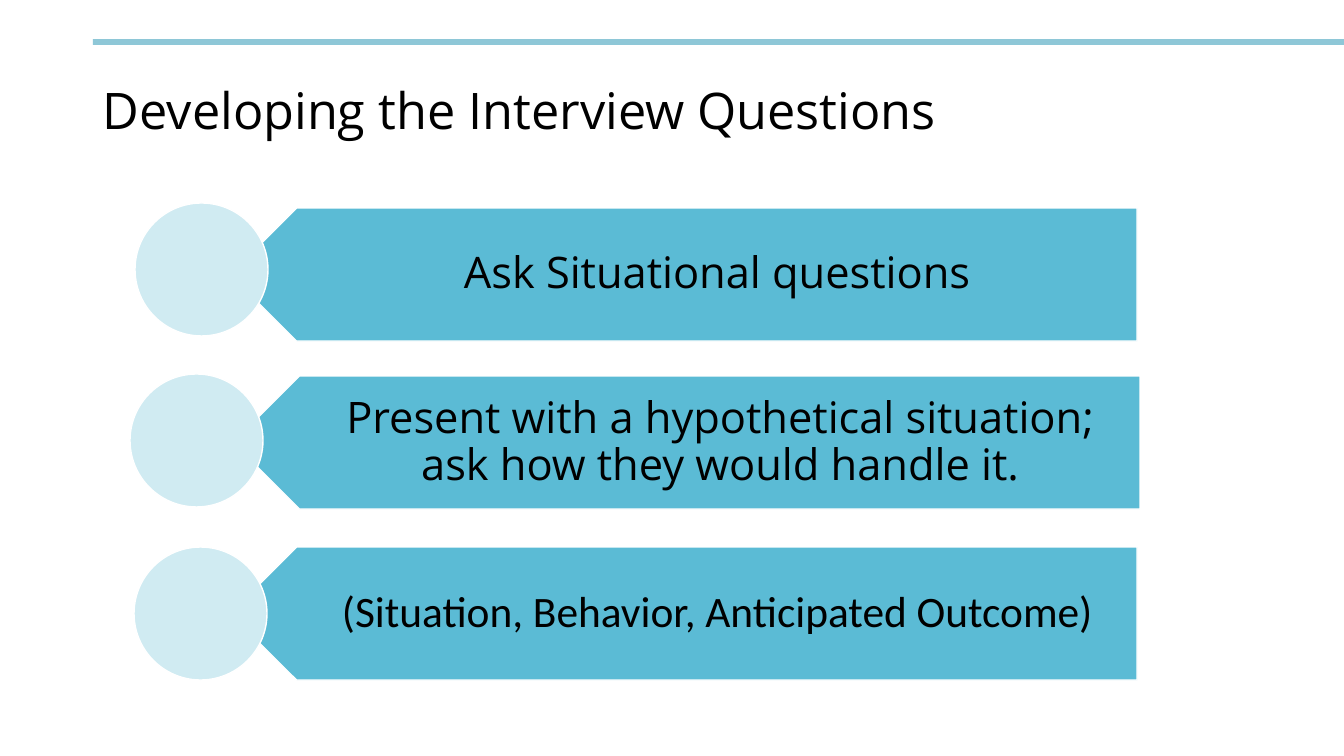
import pptx
import pptx.dml.color
import pptx.enum.shapes
import pptx.enum.text
import pptx.util

RGBColor = pptx.dml.color.RGBColor
Shape = pptx.enum.shapes.MSO_SHAPE
Align = pptx.enum.text.PP_ALIGN

BLACK = RGBColor(0x00, 0x00, 0x00)
WHITE = RGBColor(0xFF, 0xFF, 0xFF)
RULE_BLUE = RGBColor(0x8E, 0xC7, 0xD7)
ARROW_BLUE = RGBColor(0x5B, 0xBB, 0xD5)
CIRCLE_BLUE = RGBColor(0xD0, 0xEB, 0xF2)

EMU_PER_PX = 914400 / 100.8
ROW_HEIGHT = 133
ARROW_WIDTH = 907
TEXT_OFFSET = 33

# arrow left, arrow top, circle left, circle top, text, font
ROWS = [
    (230, 208, 135, 203, "Ask Situational questions", "Open Sans"),
    (233, 376, 130, 374,
     "Present with a hypothetical situation; ask how they would handle it.", "Open Sans"),
    (230, 547, 134, 547, "(Situation, Behavior, Anticipated Outcome)", "Calibri"),
]


def px(length):
    return pptx.util.Emu(round(length * EMU_PER_PX))


class SlideBuilder:
    def __init__(self, deck):
        self.page = deck.slides.add_slide(deck.slide_layouts[6])

    def shape(self, kind, left, top, width, height, fill, outline=None):
        shape = self.page.shapes.add_shape(kind, px(left), px(top), px(width), px(height))
        shape.shadow.inherit = False
        shape.fill.solid()
        shape.fill.fore_color.rgb = fill
        if outline is None:
            shape.line.fill.background()
        else:
            shape.line.color.rgb = outline
            shape.line.width = pptx.util.Pt(1)
        return shape

    def text(self, left, top, width, height, words, size, font="Open Sans",
             align=Align.LEFT, insets=(10, 5, 10, 5)):
        """Add a vertically centred text box; insets run left, top, right, bottom."""
        box = self.page.shapes.add_textbox(px(left), px(top), px(width), px(height))
        frame = box.text_frame
        frame.word_wrap = True
        frame.vertical_anchor = pptx.enum.text.MSO_ANCHOR.MIDDLE
        frame.margin_left, frame.margin_top, frame.margin_right, frame.margin_bottom = map(px, insets)
        para = frame.paragraphs[0]
        para.alignment = align
        para.line_spacing = 0.9
        span = para.add_run()
        span.text = words
        span.font.name = font
        span.font.size = pptx.util.Pt(size)
        span.font.color.rgb = BLACK

    def row(self, arrow_left, arrow_top, circle_left, circle_top, words, font):
        arrow = self.shape(Shape.PENTAGON, arrow_left, arrow_top, ARROW_WIDTH, ROW_HEIGHT,
                           ARROW_BLUE, WHITE)
        arrow.rotation = 180
        self.text(arrow_left + TEXT_OFFSET, arrow_top, ARROW_WIDTH - TEXT_OFFSET, ROW_HEIGHT,
                  words, 31, font, Align.CENTER, (58, 13, 24, 13))
        self.shape(Shape.OVAL, circle_left, circle_top, ROW_HEIGHT, ROW_HEIGHT,
                   CIRCLE_BLUE, WHITE)


def main():
    deck = pptx.Presentation()
    deck.slide_width = px(1344)
    deck.slide_height = px(756)
    builder = SlideBuilder(deck)
    builder.shape(Shape.RECTANGLE, 93, 39, 1251, 6, RULE_BLUE)
    builder.text(93, 40, 1159, 146, "Developing the Interview Questions", 36)
    for row in ROWS:
        builder.row(*row)
    deck.save("out.pptx")


if __name__ == "__main__":
    main()
